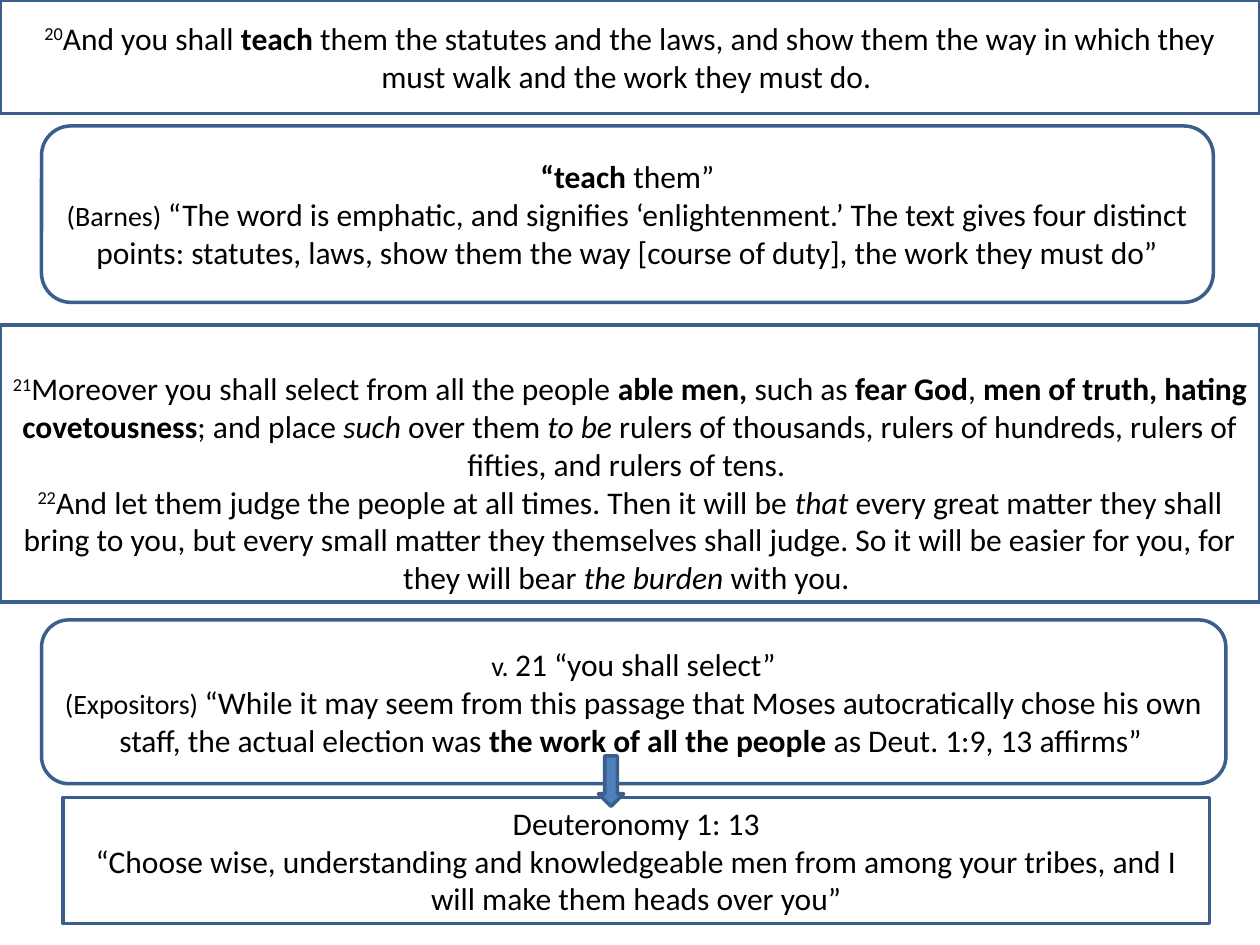
"""Build a slide of verses and comments in stacked boxes."""
from pptx import Presentation
from pptx.dml.color import RGBColor
from pptx.enum.shapes import MSO_SHAPE
from pptx.enum.text import MSO_ANCHOR, PP_ALIGN
from pptx.util import Inches, Pt

RECT = MSO_SHAPE.RECTANGLE
ROUND = MSO_SHAPE.ROUNDED_RECTANGLE
ARROW = MSO_SHAPE.DOWN_ARROW
MIDDLE = MSO_ANCHOR.MIDDLE
CENTER = PP_ALIGN.CENTER


def color(code):
    return RGBColor.from_string(code)


def block(slide, kind, place, fill):
    shape = slide.shapes.add_shape(kind, *[Inches(n) for n in place])
    shape.shadow.inherit = False
    shape.fill.solid()
    shape.fill.fore_color.rgb = color(fill)
    shape.line.color.rgb = color("3A5F8C")
    shape.line.width = Pt(2)
    return shape


deck = Presentation()
deck.slide_width = Inches(10)
deck.slide_height = Inches(7.5)
slide = deck.slides.add_slide(deck.slide_layouts[6])

boxes = [
    (RECT, (0, 2.58, 10, 2.2), 0.35, [
        [("21", "super"), ("Moreover you shall select from all the people ", ""),
         ("able men, ", "bold"), ("such as ", ""), ("fear God", "bold"), (", ", ""),
         ("men of truth, hating covetousness", "bold"), ("; and place ", ""),
         ("such", "italic"), (" over them ", ""), ("to be", "italic"),
         (" rulers of thousands, rulers of hundreds, rulers of fifties, "
          "and rulers of tens. ", "")],
        [("22", "super"),
         ("And let them judge the people at all times. Then it will be ", ""),
         ("that", "italic"),
         (" every great matter they shall bring to you, but every small matter "
          "they themselves shall judge. So it will be easier for you, "
          "for they will bear ", ""),
         ("the burden", "italic"), (" with you. ", "")],
    ]),
    (ROUND, (0.33, 4.92, 9.4, 1.3), 0.05, [
        [("v. ", "small"), ("21 “you shall select”", "")],
        [("(Expositors) ", "small"),
         ("“While it may seem from this passage that Moses autocratically chose "
          "his own staff, the actual election was ", ""),
         ("the work of all the people ", "bold"),
         ("as Deut. 1:9, 13 affirms”", ""), (" ", "small")],
    ]),
    (RECT, (0, 0, 10, 0.9), 0.05, [
        [("20", "super"), ("And you shall ", ""), ("teach", "bold"),
         (" them the statutes and the laws, and show them the way in which "
          "they must walk and the work they must do. ", "")],
    ]),
    (ROUND, (0.33, 1, 9.3, 1.4), 0.05, [
        [("“teach ", "bold"), ("them”", "")],
        [("(Barnes) ", "small"),
         ("“The word is emphatic, and signifies ‘enlightenment.’ The text gives "
          "four distinct points: statutes, laws, show them the way "
          "[course of duty], the work they must do”", "")],
    ]),
    (RECT, (0.5, 6.33, 9.1, 1), 0.05, [
        [("Deuteronomy 1: 13", "")],
        [("“Choose wise, understanding and knowledgeable men from among your "
          "tribes, and I will make them heads over you”", "")],
    ]),
]

for kind, place, top, lines in boxes:
    frame = block(slide, kind, place, "FFFFFF").text_frame
    frame.word_wrap = True
    frame.vertical_anchor = MIDDLE
    frame.margin_top = Inches(top)
    for num, line in enumerate(lines):
        para = frame.add_paragraph() if num else frame.paragraphs[0]
        para.alignment = CENTER
        for text, style in line:
            run = para.add_run()
            run.text = text
            font = run.font
            font.name = "Calibri"
            font.size = Pt(16 if style == "small" else 18)
            font.color.rgb = color("000000")
            font.bold = style == "bold"
            font.italic = style == "italic"
            if style == "super":
                run._r.get_or_add_rPr().set("baseline", "30000")

block(slide, ARROW, (4.75, 6, 0.2, 0.4), "4F81BD")

deck.save("out.pptx")
